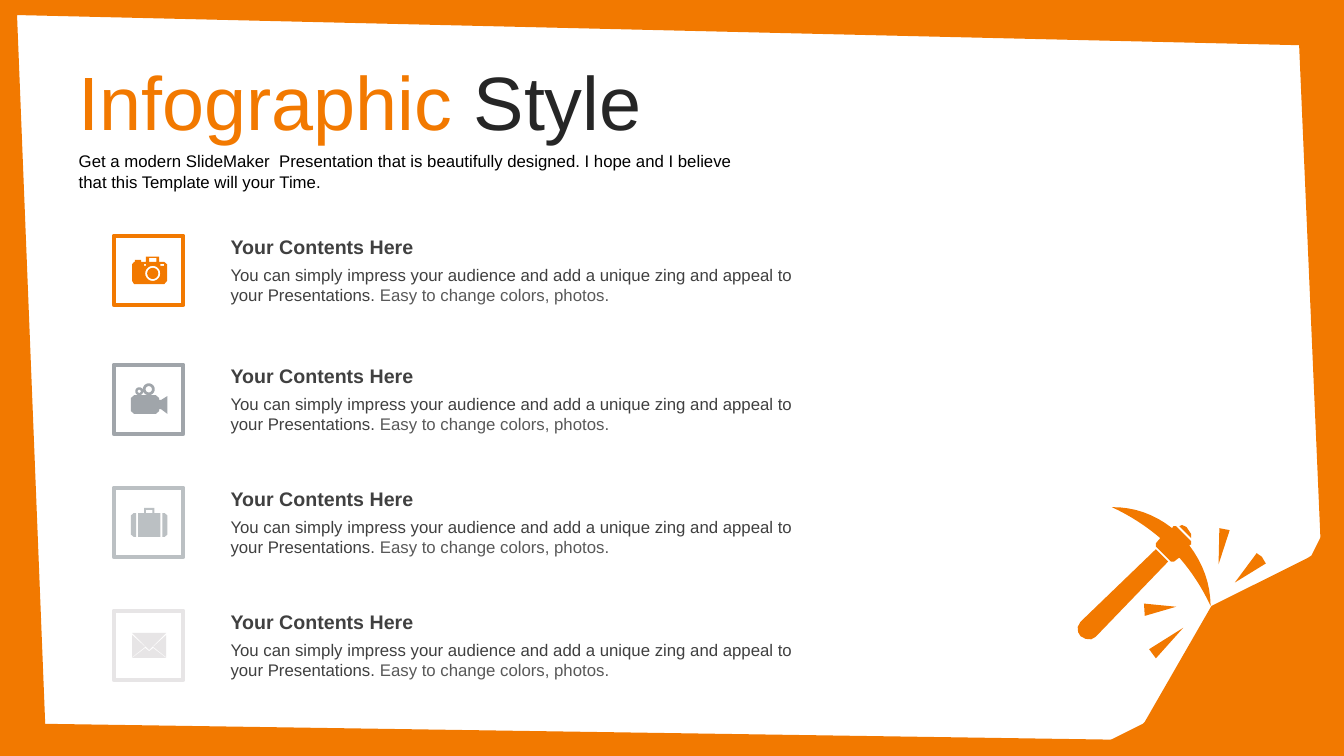
import math

import pptx
import pptx.dml.color
import pptx.enum.text
import pptx.oxml.ns
import pptx.util
from pptx.util import Cm

RGBColor = pptx.dml.color.RGBColor
ORANGE = RGBColor(0xF2, 0x79, 0x00)
STEEL = RGBColor(0xA0, 0xA5, 0xAA)
SILVER = RGBColor(0xBB, 0xC0, 0xC3)
PALE = RGBColor(0xE7, 0xE5, 0xE6)
WHITE = RGBColor(0xFF, 0xFF, 0xFF)
BLACK = RGBColor(0x00, 0x00, 0x00)
INK = RGBColor(0x26, 0x26, 0x26)
DARK_GRAY = RGBColor(0x40, 0x40, 0x40)
GRAY = RGBColor(0x59, 0x59, 0x59)

WIDTH, HEIGHT = 33.87, 19.05
BOX_LEFT, BOX_SIZE = 2.87, 1.75
TEXT_LEFT, TEXT_WIDTH = 5.56, 14.91
UNITS_PER_CM = 1000


def rectangle(left, top, right, bottom):
    return [(left, top), (right, top), (right, bottom), (left, bottom)]


def circle(x, y, radius, steps=24):
    angles = [2 * math.pi * step / steps for step in range(steps)]
    return [(x + radius * math.cos(a), y + radius * math.sin(a)) for a in angles]


def bow(start, middle, end, steps=8):
    """Points of a parabola from start to end that passes through middle."""
    points = []
    for step in range(steps + 1):
        t = step / steps
        weights = (1 - t) * (1 - 2 * t), 4 * t * (1 - t), t * (2 * t - 1)
        points.append(tuple(
            sum(w * p[axis] for w, p in zip(weights, (start, middle, end)))
            for axis in (0, 1)))
    return points


# Icon contours, in centimetres from the corner of their box
CAMERA = [
    [(0.46, 0.72), (0.51, 0.66), (0.53, 0.66), (0.53, 0.61), (0.69, 0.61),
     (0.69, 0.66), (0.81, 0.66), (0.81, 0.53), (1.14, 0.53), (1.14, 0.66),
     (1.27, 0.66), (1.34, 0.72), (1.34, 1.14), (1.27, 1.22), (0.51, 1.22),
     (0.46, 1.14)],
    rectangle(0.89, 0.56, 1.07, 0.66),
    rectangle(0.76, 0.71, 0.81, 0.76),
    rectangle(1.17, 0.71, 1.27, 0.76),
    circle(0.98, 0.95, 0.19),
    circle(0.98, 0.95, 0.14),
]
MOVIE_CAMERA = [
    [(0.43, 0.84), (0.51, 0.77), (1.06, 0.77), (1.14, 0.84), (1.14, 0.89),
     (1.19, 0.89), (1.35, 0.79), (1.35, 1.24), (1.19, 1.12), (1.14, 1.12),
     (1.14, 1.17), (1.06, 1.24), (0.51, 1.24), (0.43, 1.17)],
    circle(0.64, 0.67, 0.1),
    circle(0.64, 0.67, 0.04),
    circle(0.88, 0.62, 0.15),
    circle(0.88, 0.62, 0.08),
]
SUITCASE = [
    [(0.43, 0.7), (0.5, 0.64), (0.56, 0.64), (0.56, 1.24), (0.5, 1.24), (0.43, 1.18)],
    [(1.35, 0.7), (1.28, 0.64), (1.22, 0.64), (1.22, 1.24), (1.28, 1.24), (1.35, 1.18)],
    [(0.61, 0.64), (0.76, 0.64), (0.76, 0.51), (1.02, 0.51), (1.02, 0.64),
     (1.17, 0.64), (1.17, 1.24), (0.61, 1.24)],
    rectangle(0.81, 0.56, 0.97, 0.64),
]
ENVELOPE = [
    [(0.99, 0.94), (1.32, 1.19), (0.46, 1.19), (0.79, 0.94), (0.89, 1.02)],
    [(1.32, 0.61), (1.32, 1.17), (0.99, 0.91)],
    [(0.46, 0.61), (0.79, 0.91), (0.46, 1.17)],
    [(0.46, 0.56), (1.32, 0.56), (0.89, 0.99)],
]
ROWS = [(5.94, CAMERA, ORANGE), (9.19, MOVIE_CAMERA, STEEL),
        (12.29, SUITCASE, SILVER), (15.39, ENVELOPE, PALE)]

# Scene contours, in centimetres on the slide
FRAME = [rectangle(0, 0, WIDTH, HEIGHT),
         [(0.43, 0.38), (1.14, 18.24), (33.5, 18.72), (32.74, 1.14)]]
ROCK = [(27.18, 19.05), (28.8, 18.24), (28.85, 18.19), (30.53, 15.27),
        (32.94, 14.07), (33.05, 14.0), (33.87, 12.37), (33.87, 19.05)]
PICK_HANDLE = [(29.13, 13.84), (29.44, 14.15), (27.61, 16.05), (27.5, 16.11),
               (27.36, 16.1), (27.23, 16.03), (27.17, 15.93), (27.16, 15.8),
               (27.23, 15.67)]
PICK_HEAD = [
    *bow((29.24, 13.56), (28.66, 13.13), (28.02, 12.78)),
    *bow((28.02, 12.78), (28.82, 12.91), (29.54, 13.31)),
    (29.57, 13.26), (29.64, 13.26), (30.02, 13.64), (30.02, 13.72),
    *bow((29.97, 13.74), (30.37, 14.47), (30.51, 15.27)),
    *bow((30.51, 15.27), (30.15, 14.62), (29.72, 14.05)),
    (29.59, 14.15), (29.51, 14.15), (29.13, 13.77), (29.13, 13.69)]
PICK_CAP = [(30.02, 13.56), (29.72, 13.26), (29.79, 13.23), (29.9, 13.28), (30.02, 13.46)]
SPARKS = [
    [(29.82, 15.82), (29.13, 16.59), (28.96, 16.36)],
    [(31.67, 13.94), (31.8, 14.03), (31.9, 14.2), (31.12, 14.68)],
    [(28.85, 15.52), (28.83, 15.21), (29.64, 15.29)],
    [(30.73, 13.31), (30.99, 13.36), (30.71, 14.22)],
]


def add_outline(slide, contours, color, left=0, top=0):
    """Draw contours as one filled shape; inner contours cut holes."""
    builder = None
    for contour in contours:
        points = [((left + x) * UNITS_PER_CM, (top + y) * UNITS_PER_CM) for x, y in contour]
        if builder is None:
            builder = slide.shapes.build_freeform(*points[0], scale=Cm(1) / UNITS_PER_CM)
        else:
            builder.move_to(*points[0])
        builder.add_line_segments(points[1:], close=True)
    shape = builder.convert_to_shape()
    shape.shadow.inherit = False
    shape.fill.solid()
    shape.fill.fore_color.rgb = color
    shape.line.fill.background()


def add_icon_box(slide, top, color):
    box = slide.shapes.add_shape(
        pptx.enum.shapes.MSO_SHAPE.RECTANGLE,
        Cm(BOX_LEFT), Cm(top), Cm(BOX_SIZE), Cm(BOX_SIZE))
    box.shadow.inherit = False
    box.fill.solid()
    box.fill.fore_color.rgb = WHITE
    box.line.color.rgb = color
    box.line.width = pptx.util.Pt(3)


def write_text(shape, *runs, size, bold=False, anchor=pptx.enum.text.MSO_ANCHOR.TOP):
    """Fill a shape with one left-aligned paragraph of (text, color) runs."""
    frame = shape.text_frame
    frame.word_wrap = True
    frame.auto_size = pptx.enum.text.MSO_AUTO_SIZE.NONE
    frame.vertical_anchor = anchor
    paragraph = frame.paragraphs[0]
    paragraph.alignment = pptx.enum.text.PP_ALIGN.LEFT
    paragraph.space_before = pptx.util.Pt(0)
    for text, color in runs:
        run = paragraph.add_run()
        run.text = text
        run.font.name = "Arial"
        run.font.size = pptx.util.Pt(size)
        run.font.bold = bold
        run.font.color.rgb = color


def place(shape, left, top, width, height):
    shape.left, shape.top = Cm(left), Cm(top)
    shape.width, shape.height = Cm(width), Cm(height)


def remove_bullet(paragraph):
    properties = paragraph._p.get_or_add_pPr()
    properties.set("marL", "0")
    properties.set("indent", "0")
    properties.append(pptx.oxml.parse_xml(
        f"<a:buNone {pptx.oxml.ns.nsdecls('a')}/>"))


def add_header(slide):
    title, intro = slide.placeholders
    place(title, 1.73, 1.24, 17.2, 2.57)
    write_text(title, ("Infographic", ORANGE), (" Style", INK), size=54,
               anchor=pptx.enum.text.MSO_ANCHOR.MIDDLE)
    place(intro, 1.73, 3.68, 17.12, 1.27)
    write_text(intro, ("Get a modern SlideMaker  Presentation that is beautifully designed. "
                       "I hope and I believe that this Template will your Time.", BLACK), size=12)
    remove_bullet(intro.text_frame.paragraphs[0])


def add_row(slide, top, icon, color):
    add_icon_box(slide, top, color)
    add_outline(slide, icon, color, left=BOX_LEFT, top=top)
    heading = slide.shapes.add_textbox(Cm(TEXT_LEFT), Cm(top - 0.15), Cm(TEXT_WIDTH), Cm(0.86))
    write_text(heading, ("Your Contents Here", DARK_GRAY), size=14, bold=True)
    details = slide.shapes.add_textbox(Cm(TEXT_LEFT), Cm(top + 0.61), Cm(TEXT_WIDTH), Cm(1.27))
    write_text(details, ("You can simply impress your audience and add a unique zing "
                         "and appeal to your Presentations. ", DARK_GRAY),
               ("Easy to change colors, photos.", GRAY), size=12)


def main():
    presentation = pptx.Presentation()
    presentation.slide_width, presentation.slide_height = Cm(WIDTH), Cm(HEIGHT)
    slide = presentation.slides.add_slide(presentation.slide_layouts[1])
    for contour in (ROCK, PICK_HANDLE, PICK_HEAD, PICK_CAP, *SPARKS):
        add_outline(slide, [contour], ORANGE)
    add_header(slide)
    for top, icon, color in ROWS:
        add_row(slide, top, icon, color)
    add_outline(slide, FRAME, ORANGE)
    presentation.save("out.pptx")


if __name__ == "__main__":
    main()
